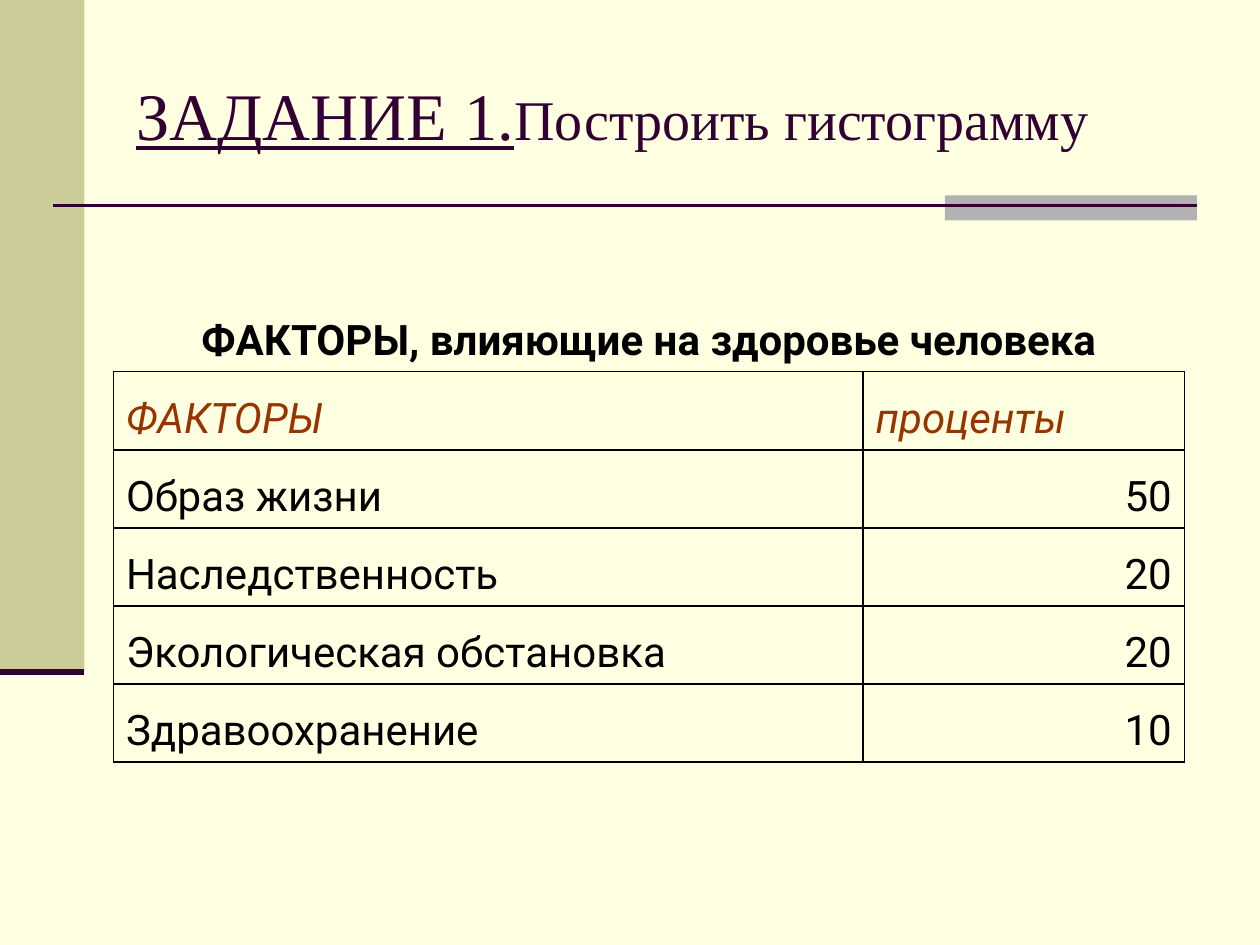
import pptx
import pptx.util
import pptx.dml.color
import pptx.enum.shapes
import pptx.enum.text
import pptx.oxml
import pptx.oxml.ns
from lxml import etree

Inches = pptx.util.Inches
ALIGN = pptx.enum.text.PP_ALIGN
ANCHOR = pptx.enum.text.MSO_ANCHOR

HEX = {"page": "FFFFE1", "band": "CCCC99", "tab": "B2B2B2",
       "plum": "330033", "rust": "993300", "ink": "000000"}
TITLE = [("ЗАДАНИЕ 1.", 38, True), ("Построить гистограмму", 32, False)]
HEAD = "ФАКТОРЫ, влияющие на здоровье человека"
NAMES = ("ФАКТОРЫ", "проценты")
DATA = [("Образ жизни", 50), ("Наследственность", 20),
        ("Экологическая обстановка", 20), ("Здравоохранение", 10)]
BARS = [(0, 0, 0.67, 5.33, "band"), (7.5, 1.55, 2, 0.2, "tab")]
RULES = [(0.42, 9.5, 1.63, 1.5), (0, 0.67, 5.33, 3.5)]
COLS = (5.95, 2.55)
TOP, ROW = 1.01, 0.62


def rgb(name):
    return pptx.dml.color.RGBColor.from_string(HEX[name])


def write(par, text, size=24, face="Roboto", color="ink", bold=False,
          slant=False, under=False, align=ALIGN.LEFT):
    par.alignment = align
    run = par.add_run()
    run.text = text
    font = run.font
    font.size, font.name = pptx.util.Pt(size), face
    font.bold, font.italic, font.underline = bold, slant, under
    font.color.rgb = rgb(color)


def edge(cell, side, shown):
    props = cell._tc.get_or_add_tcPr()
    line = etree.SubElement(props, pptx.oxml.ns.qn("a:ln" + side), w="12700")
    kind = "a:solidFill" if shown else "a:noFill"
    fill = etree.SubElement(line, pptx.oxml.ns.qn(kind))
    if shown:
        etree.SubElement(fill, pptx.oxml.ns.qn("a:srgbClr"), val=HEX["ink"])


def frame(slide):
    for x, y, w, h, tone in BARS:
        bar = slide.shapes.add_shape(
            pptx.enum.shapes.MSO_SHAPE.RECTANGLE, *map(Inches, (x, y, w, h)))
        bar.shadow.inherit = False
        bar.fill.solid()
        bar.fill.fore_color.rgb = rgb(tone)
        bar.line.fill.background()
    for left, right, y, width in RULES:
        rule = slide.shapes.add_connector(
            pptx.enum.shapes.MSO_CONNECTOR.STRAIGHT,
            *map(Inches, (left, y, right, y)))
        rule.line.color.rgb = rgb("plum")
        rule.line.width = pptx.util.Pt(width)
        etree.SubElement(rule._element.spPr, pptx.oxml.ns.qn("a:effectLst"))


def head(slide):
    title = slide.shapes.title
    title.left, title.top, title.width, title.height = map(
        Inches, (0.98, 0.28, 9.02, 1.25))
    box = title.text_frame
    box.auto_size = pptx.enum.text.MSO_AUTO_SIZE.NONE
    box.word_wrap = True
    box.vertical_anchor = ANCHOR.MIDDLE
    for text, size, under in TITLE:
        write(box.paragraphs[0], text, size=size, face="Times New Roman",
              color="plum", under=under)


def grid(slide):
    rows = [(HEAD, None), NAMES] + DATA
    high = TOP + ROW * (len(rows) - 1)
    table = slide.shapes.add_table(
        len(rows), len(COLS), *map(Inches, (0.9, 1.94, sum(COLS), high))).table
    table.first_row = table.horz_banding = False
    for col, width in zip(table.columns, COLS):
        col.width = Inches(width)
    for r, row in enumerate(rows):
        table.rows[r].height = Inches(ROW if r else TOP)
        for c, value in enumerate(row):
            cell = table.cell(r, c)
            for side in "LRTB":
                edge(cell, side, r > 0 or side == "B")
            cell.fill.background()
            cell.vertical_anchor = ANCHOR.BOTTOM
            if value is None:
                continue
            align = ALIGN.RIGHT if r > 1 and c else ALIGN.LEFT
            write(cell.text_frame.paragraphs[0], str(value),
                  color="rust" if r == 1 else "ink", bold=r == 0,
                  slant=r == 1, align=align if r else ALIGN.CENTER)
    table.cell(0, 0).merge(table.cell(0, 1))


def main():
    deck = pptx.Presentation()
    deck.slide_width, deck.slide_height = Inches(10), Inches(7.5)
    slide = deck.slides.add_slide(deck.slide_layouts[5])
    slide.background.fill.solid()
    slide.background.fill.fore_color.rgb = rgb("page")
    frame(slide)
    head(slide)
    grid(slide)
    deck.save("out.pptx")


if __name__ == "__main__":
    main()
